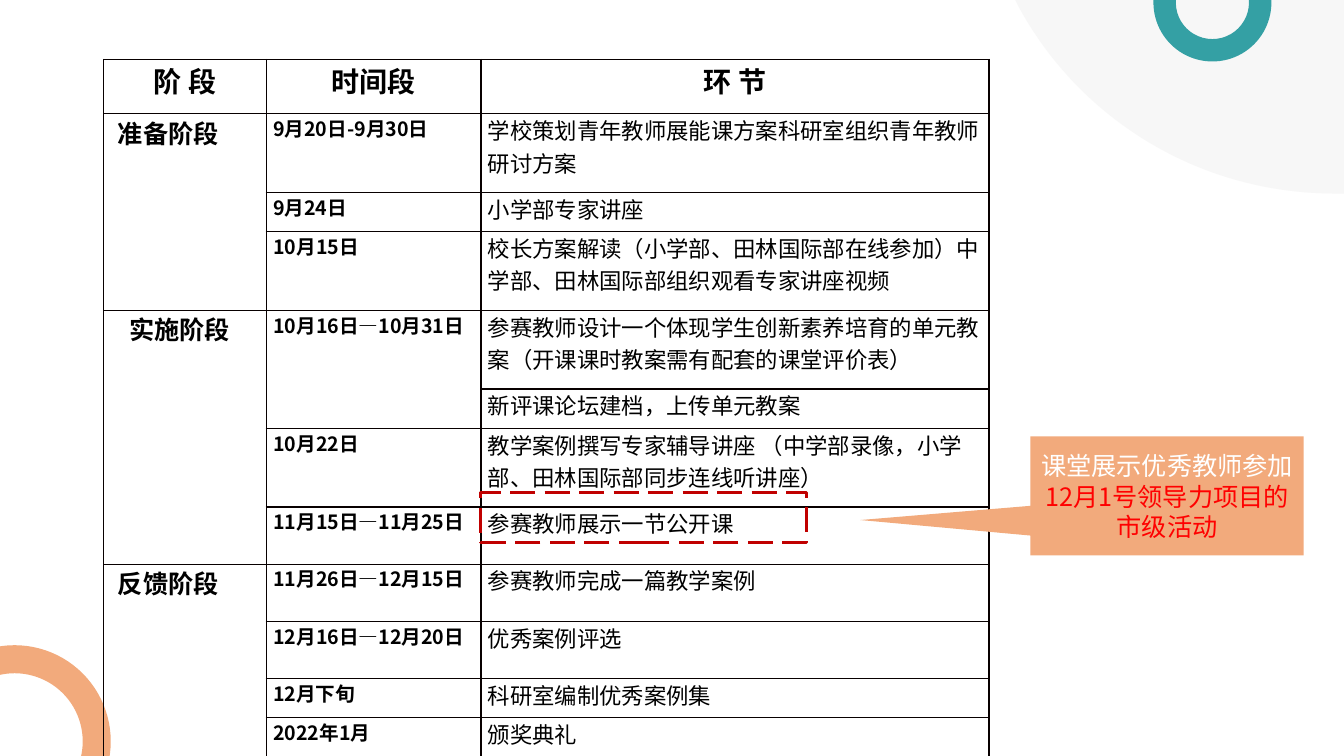
from lxml.etree import SubElement
from pptx import Presentation
from pptx.dml.color import RGBColor
from pptx.enum.dml import MSO_LINE_DASH_STYLE as Dash
from pptx.enum.shapes import MSO_SHAPE as Shape
from pptx.enum.text import MSO_ANCHOR as Anchor, PP_ALIGN as Align
from pptx.oxml.ns import qn
from pptx.util import Inches, Pt

FONT = "Noto Sans CJK SC"
BLACK = RGBColor(0, 0, 0)
WHITE = RGBColor(255, 255, 255)
RED = RGBColor(255, 0, 0)
DARK_RED = RGBColor(0xC0, 0, 0)
GREY = RGBColor(0xF2, 0xF2, 0xF2)
TEAL = RGBColor(0x34, 0xA0, 0xA4)
ORANGE = RGBColor(0xF2, 0xAA, 0x7C)
BORDER = RGBColor(8, 0, 0)

HEADINGS = ["阶 段", "时间段", "环 节"]
PLAN = [
    ("准备阶段", 0.14, [
        ("9月20日-9月30日", ["学校策划青年教师展能课方案科研室组织青年教师研讨方案"]),
        ("9月24日", ["小学部专家讲座"]),
        ("10月15日", ["校长方案解读（小学部、田林国际部在线参加）中学部、田林国际部组织观看专家讲座视频"]),
    ]),
    ("实施阶段", 0.25, [
        ("10月16日—10月31日", [
            "参赛教师设计一个体现学生创新素养培育的单元教案（开课课时教案需有配套的课堂评价表）",
            "新评课论坛建档，上传单元教案",
        ]),
        ("10月22日", ["教学案例撰写专家辅导讲座 （中学部录像，小学部、田林国际部同步连线听讲座）"]),
        ("11月15日—11月25日", ["参赛教师展示一节公开课"]),
    ]),
    ("反馈阶段", 0.14, [
        ("11月26日—12月15日", ["参赛教师完成一篇教学案例"]),
        ("12月16日—12月20日", ["优秀案例评选"]),
        ("12月下旬", ["科研室编制优秀案例集"]),
        ("2022年1月", ["颁奖典礼"]),
    ]),
]
CALLOUT = [("课堂展示优秀教师参加", WHITE), ("12月1号领导力项目的市级活动", RED)]
COLUMN_WIDTHS = [1.61, 2.13, 5.04]
HEADING_HEIGHT, LINE_HEIGHT, LONG_TEXT = 0.54, 0.39, 22
CURVE = [(13.24, 1.92), (11.88, 1.92), (10.7, 1.17), (10.1, 0.06)]
CURVE_STEPS = 40


def set_font(para, size, bold=False, color=BLACK):
    """Format a whole paragraph, with the same East Asian typeface."""
    font = para.font
    font.size, font.bold, font.name = Pt(size), bold, FONT
    font.color.rgb = color
    defaults = para._p.pPr.find(qn("a:defRPr"))
    SubElement(defaults, qn("a:ea"), typeface=FONT)


def add_borders(cell):
    """Draw a thin line on all four sides of a cell."""
    properties = cell._tc.get_or_add_tcPr()
    for side in ("a:lnL", "a:lnR", "a:lnT", "a:lnB"):
        line = SubElement(properties, qn(side), w=str(Pt(1)))
        fill = SubElement(line, qn("a:solidFill"))
        SubElement(fill, qn("a:srgbClr"), val=str(BORDER))


def fill_cell(cell, text, size, bold=True, left=0.07, align=Align.LEFT):
    """Write one table cell."""
    cell.margin_left = Inches(left)
    para = cell.text_frame.paragraphs[0]
    para.text = text
    para.alignment = align
    set_font(para, size, bold)


def add_plan(page):
    """Add the schedule table with its merged stages and dates."""
    steps = [step for _, _, dates in PLAN for _, group in dates for step in group]
    heights = [HEADING_HEIGHT] + [
        LINE_HEIGHT * (2 if len(step) > LONG_TEXT else 1) for step in steps]
    frame = page.shapes.add_table(
        len(heights), len(HEADINGS), Inches(1.03), Inches(0.59),
        Inches(sum(COLUMN_WIDTHS)), Inches(sum(heights)))
    table = frame.table
    table.first_row = table.horz_banding = False
    for column, width in zip(table.columns, COLUMN_WIDTHS):
        column.width = Inches(width)
    for row, height in zip(table.rows, heights):
        row.height = Inches(height)
    for cell in table.iter_cells():
        cell.margin_left = cell.margin_right = Inches(0.07)
        cell.margin_top = cell.margin_bottom = 0
        add_borders(cell)
        cell.fill.background()
    for index, heading in enumerate(HEADINGS):
        fill_cell(table.cell(0, index), heading, 20, align=Align.CENTER)
    row = 1
    for stage, indent, dates in PLAN:
        stage_row = row
        for date, group in dates:
            date_row = row
            for step in group:
                fill_cell(table.cell(row, 2), step, 16, bold=False)
                row += 1
            fill_cell(table.cell(date_row, 1), date, 14)
            if len(group) > 1:
                table.cell(date_row, 1).merge(table.cell(row - 1, 1))
        fill_cell(table.cell(stage_row, 0), stage, 18, left=indent)
        table.cell(stage_row, 0).merge(table.cell(row - 1, 0))


def add_corner(page):
    """Add the translucent rounded area in the top right corner."""
    points = [(10.07, 0), (13.33, 0), (13.33, 1.92)]
    for step in range(CURVE_STEPS + 1):
        t = step / CURVE_STEPS
        weights = [(1 - t) ** 3, 3 * t * (1 - t) ** 2, 3 * t * t * (1 - t), t ** 3]
        points.append(tuple(
            sum(weight * point[axis] for weight, point in zip(weights, CURVE))
            for axis in (0, 1)))
    points = [(Inches(x), Inches(y)) for x, y in points]
    builder = page.shapes.build_freeform(*points[0])
    builder.add_line_segments(points[1:], close=True)
    corner = builder.convert_to_shape()
    corner.shadow.inherit = False
    corner.fill.solid()
    corner.fill.fore_color.rgb = GREY
    corner.line.fill.background()
    color = corner._element.spPr.find(qn("a:solidFill")).find(qn("a:srgbClr"))
    SubElement(color, qn("a:alpha"), val="61000")


def add_figure(page, kind, place, fill=None, line=None, width=0):
    """Add a preset shape with a plain fill or outline."""
    figure = page.shapes.add_shape(kind, *map(Inches, place))
    figure.shadow.inherit = False
    if fill is None:
        figure.fill.background()
    else:
        figure.fill.solid()
        figure.fill.fore_color.rgb = fill
    if line is None:
        figure.line.fill.background()
    else:
        figure.line.color.rgb = line
        figure.line.width = Pt(width)
    return figure


def add_callout(page):
    """Add the note that points at the open lesson."""
    callout = add_figure(page, Shape.RECTANGULAR_CALLOUT, (10.22, 4.33, 2.71, 1.18), ORANGE)
    callout.adjustments[0], callout.adjustments[1] = -1.123, 0.203
    callout.text_frame.word_wrap = True
    callout.text_frame.vertical_anchor = Anchor.MIDDLE
    para = callout.text_frame.paragraphs[0]
    para.alignment = Align.CENTER
    set_font(para, 18, color=WHITE)
    for text, color in CALLOUT:
        span = para.add_run()
        span.text = text
        span.font.color.rgb = color


def main():
    """Build the schedule slide."""
    deck = Presentation()
    deck.slide_width, deck.slide_height = Inches(13.33), Inches(7.5)
    page = deck.slides.add_slide(deck.slide_layouts[6])
    add_corner(page)
    donut = add_figure(page, Shape.DONUT, (11.44, -0.56, 1.17, 1.17), TEAL)
    donut.adjustments[0] = 0.19
    add_figure(page, Shape.OVAL, (-0.67, 6.54, 1.63, 1.63), line=ORANGE, width=20)
    add_plan(page)
    marker = add_figure(page, Shape.RECTANGLE, (4.77, 4.89, 3.23, 0.49),
                        line=DARK_RED, width=2.25)
    marker.line.dash_style = Dash.LONG_DASH
    add_callout(page)
    deck.save("out.pptx")


if __name__ == "__main__":
    main()
